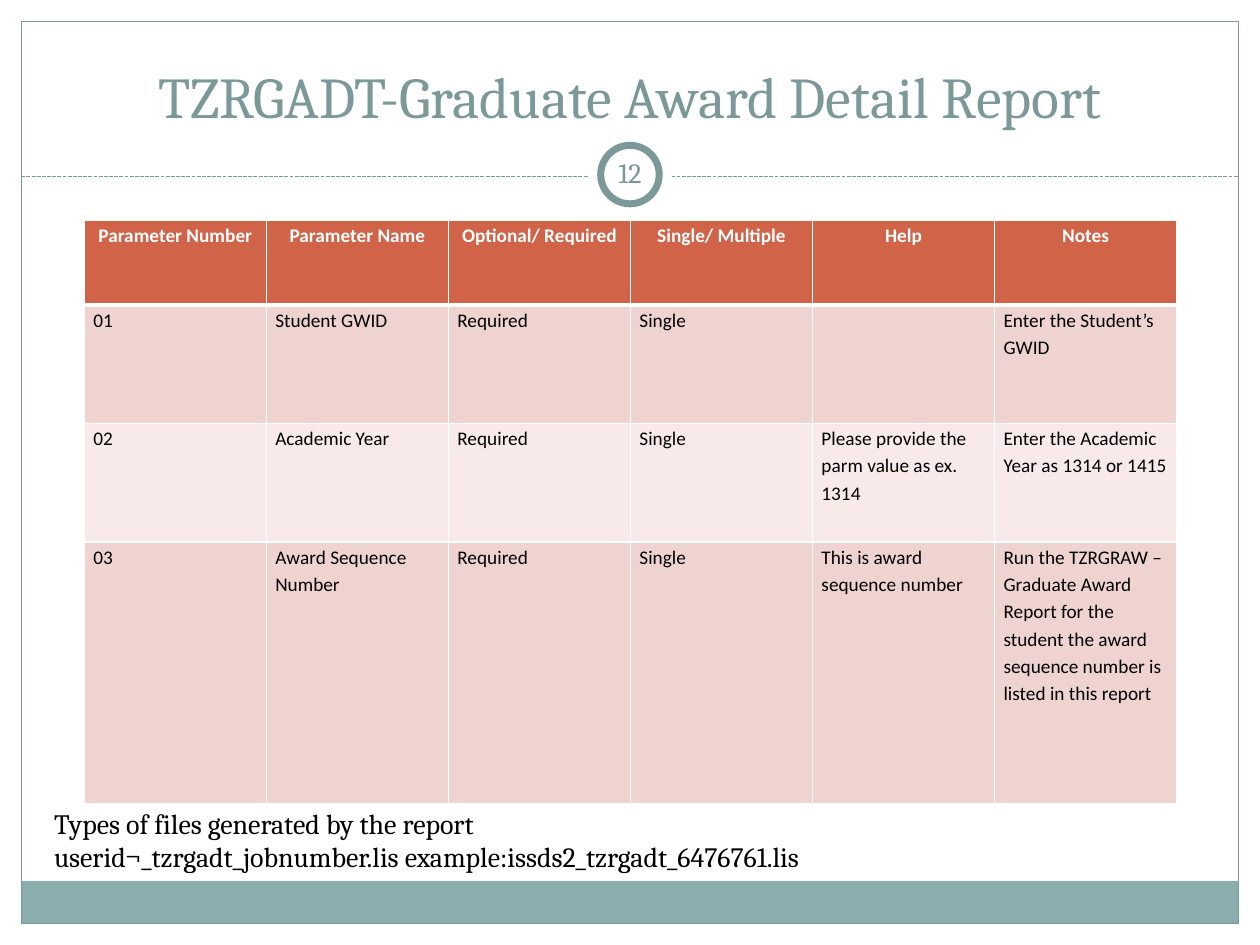
import pptx
import pptx.util
import pptx.dml.color
import pptx.enum.dml
import pptx.enum.shapes
import pptx.enum.text
import pptx.oxml
import pptx.oxml.ns
from lxml import etree

Cm = pptx.util.Cm
Pt = pptx.util.Pt
KIND = pptx.enum.shapes.MSO_SHAPE
ALIGN = pptx.enum.text.PP_ALIGN
ANCHOR = pptx.enum.text.MSO_ANCHOR
qn = pptx.oxml.ns.qn

COLORS = {
    "white": "FFFFFF", "black": "000000", "teal": "7C999A", "band": "8CADAE",
    "head": "D16349", "dark": "EED3D0", "light": "F7EAE9",
}
ROWS = [
    ["Parameter Number", "Parameter Name", "Optional/ Required",
     "Single/ Multiple", "Help", "Notes"],
    ["01", "Student GWID", "Required", "Single", "", "Enter the Student’s GWID"],
    ["02", "Academic Year", "Required", "Single",
     "Please provide the parm value as ex. 1314",
     "Enter the Academic Year as 1314 or 1415"],
    ["03", "Award Sequence Number", "Required", "Single",
     "This is award sequence number",
     "Run the TZRGRAW – Graduate Award Report for the student the award "
     "sequence number is listed in this report"],
]
HEIGHTS = [1.7, 2.39, 2.39, 5.28]
FILES = ["Types of files generated by the report",
         "userid¬_tzrgadt_jobnumber.lis example:issds2_tzrgadt_6476761.lis"]


def rgb(name):
    return pptx.dml.color.RGBColor.from_string(COLORS[name])


def style(para, size, color, font="Cambria", bold=False, align=ALIGN.LEFT):
    para.alignment = align
    for run in para.runs:
        run.font.size = Pt(size)
        run.font.name = font
        run.font.bold = bold
        run.font.color.rgb = rgb(color)


def shape(slide, kind, x, y, w, h, fill=None, line=None, width=0.75):
    item = slide.shapes.add_shape(kind, Cm(x), Cm(y), Cm(w), Cm(h))
    item.shadow.inherit = False
    if fill:
        item.fill.solid()
        item.fill.fore_color.rgb = rgb(fill)
    else:
        item.fill.background()
    if line:
        item.line.color.rgb = rgb(line)
        item.line.width = Pt(width)
    else:
        item.line.fill.background()
    return item


def label(slide, x, y, w, h, lines, size, color, align=ALIGN.LEFT,
          anchor=ANCHOR.TOP, inset=None):
    box = slide.shapes.add_textbox(Cm(x), Cm(y), Cm(w), Cm(h))
    frame = box.text_frame
    frame.word_wrap = True
    frame.vertical_anchor = anchor
    if inset is not None:
        frame.margin_left = frame.margin_right = Cm(inset)
        frame.margin_top = frame.margin_bottom = Cm(inset)
    frame.text = "\n".join(lines)
    for para in frame.paragraphs:
        style(para, size, color, align=align)


def border(cell, side, width):
    line = etree.SubElement(cell._tc.get_or_add_tcPr(), qn("a:ln" + side),
                            w=str(Pt(width)))
    fill = etree.SubElement(line, qn("a:solidFill"))
    etree.SubElement(fill, qn("a:srgbClr"), val=COLORS["white"])


def frame(slide, x, y, w, h):
    """Draw the page border, the bottom band and the dashed divider."""
    band = 0.86
    shape(slide, KIND.RECTANGLE, x, y + h - band, w, band, fill="band")
    shape(slide, KIND.RECTANGLE, x, y, w, h, line="teal")
    rule = slide.shapes.add_connector(
        pptx.enum.shapes.MSO_CONNECTOR.STRAIGHT,
        Cm(x), Cm(y + 3.13), Cm(x + w), Cm(y + 3.13))
    rule.line.color.rgb = rgb("teal")
    rule.line.width = Pt(0.75)
    rule.line.dash_style = pptx.enum.dml.MSO_LINE.SQUARE_DOT
    etree.SubElement(rule._element.spPr, qn("a:effectLst"))


def badge(slide, x, y, size, text):
    """Draw the ringed page number inside a square box."""
    gap = 0.26
    ring = size - 2 * gap
    shape(slide, KIND.OVAL, x, y, size, size, fill="white")
    shape(slide, KIND.OVAL, x + gap, y + gap, ring, ring,
          fill="white", line="teal", width=4)
    label(slide, x + 0.21, y + 0.2, size - 0.42, 1.22, [text], 16, "teal",
          ALIGN.CENTER, ANCHOR.MIDDLE, 0.13)


def grid(slide, x, y, w, h):
    """Draw the parameter table."""
    count = len(ROWS[0])
    table = slide.shapes.add_table(len(ROWS), count, Cm(x), Cm(y),
                                   Cm(w), Cm(h)).table
    for col in table.columns:
        col.width = Cm(w / count)
    for r, (row, high) in enumerate(zip(ROWS, HEIGHTS)):
        table.rows[r].height = Cm(high)
        top = r == 0
        tint = "head" if top else "dark" if r % 2 else "light"
        for c, text in enumerate(row):
            cell = table.cell(r, c)
            cell.margin_left = cell.margin_right = Cm(0.18)
            cell.margin_top = cell.margin_bottom = 0
            for side, width in (("L", 1), ("R", 1), ("T", 3 if r == 1 else 1),
                                ("B", 3 if top else 1)):
                border(cell, side, width)
            cell.fill.solid()
            cell.fill.fore_color.rgb = rgb(tint)
            cell.text_frame.text = text
            para = cell.text_frame.paragraphs[0]
            para.line_spacing = 1.15
            para.space_after = Pt(10)
            style(para, 11, "white" if top else "black", "Calibri", top,
                  ALIGN.CENTER if top else ALIGN.LEFT)


def main():
    deck = pptx.Presentation()
    deck.slide_width, deck.slide_height = Cm(25.4), Cm(19.05)
    slide = deck.slides.add_slide(deck.slide_layouts[6])
    frame(slide, 0.43, 0.43, 24.54, 18.19)
    label(slide, 0.84, 0.64, 23.7, 2.11,
          ["TZRGADT-Graduate Award Detail Report"], 33, "teal",
          ALIGN.CENTER, ANCHOR.BOTTOM)
    badge(slide, 11.85, 2.67, 1.7, "12")
    grid(slide, 1.7, 4.45, 22.02, sum(HEIGHTS))
    label(slide, 0.84, 16.13, 24.13, 2.39, FILES, 16, "black")
    deck.save("out.pptx")


if __name__ == "__main__":
    main()
